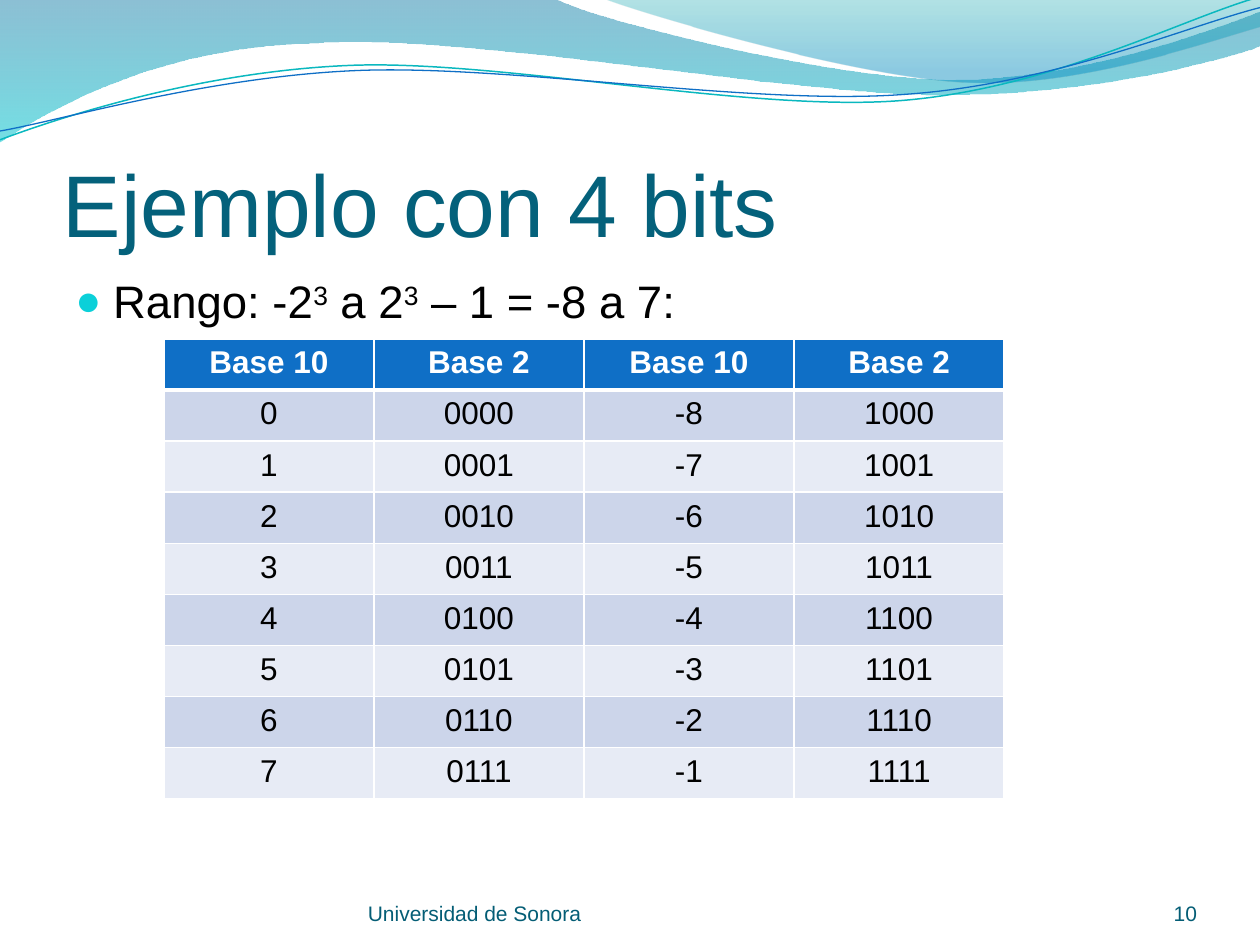
"""Builds a slide listing the 4-bit signed integers under a wave banner."""
from math import cos, radians, sin

from lxml.etree import SubElement
from pptx import Presentation
from pptx.dml.color import RGBColor
from pptx.enum.text import MSO_ANCHOR, PP_ALIGN
from pptx.oxml import parse_xml
from pptx.oxml.ns import nsdecls, qn
from pptx.util import Inches, Pt

TITLE = "Ejemplo con 4 bits"
RANGE = [("Rango: -2", False), ("3", True), (" a 2", False), ("3", True),
         (" – 1 = -8 a 7:", False)]
FOOTER, NUMBER = "Universidad de Sonora", "10"
HEADERS = ["Base 10", "Base 2"] * 2
ROWS = [[str(n), f"{n:04b}", str(n - 8), f"{n + 8:04b}"] for n in range(8)]

THEME = {
    "font": "Arial", "title": "04617B", "text": "000000", "footer": "045D75",
    "bullet": "0BD0D9", "header": "0F6FC6", "white": "FFFFFF",
    "bands": ["CCD5EA", "E7EBF5"],
    "title_pt": 50, "body_pt": 26, "table_pt": 18, "footer_pt": 12,
}

WAVES = [
    {"box": (-0.01, -0.01, 10.02, 1.14),
     "path": [(0, 0), (4.4, -0.01), (4.76, 0.17, 6.64, 0.63, 7.58, 0.63),
              (8.53, 0.63, 9.58, 0.26, 10, 0.09), (10.01, 0.36),
              (9.83, 0.44, 8.7, 0.76, 7.46, 0.75),
              (6.22, 0.75, 3.82, 0.28, 2.57, 0.34),
              (1.29, 0.36, 0.46, 0.83, -0.01, 1.13), (0, 0)],
     "stops": [(0, "0074A1", 45), (1, "00C6CF", 55)]},
    {"box": (4.79, -0.01, 5.21, 0.7),
     "path": [(4.79, -0.01), (5.09, 0.11, 6.82, 0.62, 7.69, 0.65),
              (8.56, 0.69, 9.61, 0.32, 10, 0.21), (10, 0), (4.79, -0.01)],
     "stops": [(0, "00A1A9", 30), (0.8, "008BBF", 45)]},
    {"box": (-0.02, 0.22, 10.02, 0.71), "tilt": 2.7,
     "path": [(0, 1.11), (0.48, 0.93, 1.58, 0.57, 2.77, 0.52),
              (3.95, 0.47, 5.93, 0.89, 7.13, 0.8),
              (8.33, 0.71, 9.38, 0.15, 9.98, -0.02)],
     "line": ("0AB8BF", 0.85)},
    {"box": (-0.02, 0.3, 10.03, 0.58), "tilt": 2.7,
     "path": [(0, 1.04), (0.47, 0.96, 1.64, 0.61, 2.83, 0.56),
              (4.03, 0.51, 5.97, 0.84, 7.17, 0.75),
              (8.36, 0.67, 9.41, 0.21, 10, 0.06)],
     "line": ("0F6FC6", 0.75)},
]


def rgb(value):
    return RGBColor.from_string(value)


def to_local(point, box, tilt):
    left, top, width, height = box
    dx, dy = point[0] - left - width / 2, point[1] - top - height / 2
    a = radians(tilt)
    return (Inches(width / 2 + dx * cos(a) - dy * sin(a)),
            Inches(height / 2 + dx * sin(a) + dy * cos(a)))


def add_wave(s, box, path, tilt=0, stops=None, line=None):
    segs = [[to_local(seg[i:i + 2], box, tilt) for i in range(0, len(seg), 2)] for seg in path]
    builder = s.shapes.build_freeform(*segs[0][0])
    builder.add_line_segments([seg[-1] for seg in segs[1:]], close=bool(stops))
    sp = builder.convert_to_shape()
    sp.left, sp.top, sp.width, sp.height = map(Inches, box)
    sp.rotation = -tilt % 360
    outline = next(sp.element.iter(qn("a:path")))
    outline.set("w", str(sp.width))
    outline.set("h", str(sp.height))
    for node, seg in zip(list(outline), segs):
        if len(seg) == 3:
            node.addprevious(parse_xml(f'<a:cubicBezTo {nsdecls("a")}/>'))
            curve = node.getprevious()
            outline.remove(node)
            node = curve
        for pt in list(node):
            node.remove(pt)
        for x, y in seg:
            SubElement(node, qn("a:pt"), x=str(x), y=str(y))
    sp.shadow.inherit = False
    if line:
        sp.fill.background()
        sp.line.color.rgb, sp.line.width = rgb(line[0]), Pt(line[1])
        return
    sp.line.fill.background()
    sp.fill.gradient()
    sp.fill.gradient_angle = 270
    for stop, (pos, color, _) in zip(sp.fill.gradient_stops, stops):
        stop.position, stop.color.rgb = pos, rgb(color)
    for clr, (_, _, opacity) in zip(sp.element.spPr.iter(qn("a:srgbClr")), stops):
        SubElement(clr, qn("a:alpha")).set("val", str(opacity * 1000))


def write(tf, text, size, color, bold=False, align=PP_ALIGN.LEFT):
    p = tf.paragraphs[0]
    p.alignment = align
    for part, raised in [(text, False)] if isinstance(text, str) else text:
        r = p.add_run()
        r.text = part
        r.font.name, r.font.size = THEME["font"], Pt(size)
        r.font.bold, r.font.color.rgb = bold, rgb(color)
        if raised:
            r.font._element.set("baseline", "30000")
    return p


def add_box(s, box, insets=(0, 0, 0, 0), anchor=MSO_ANCHOR.BOTTOM):
    tf = s.shapes.add_textbox(*map(Inches, box)).text_frame
    tf.word_wrap, tf.vertical_anchor = True, anchor
    tf.margin_left, tf.margin_top, tf.margin_right, tf.margin_bottom = map(Inches, insets)
    return tf


def add_bullet(p):
    p.space_before = Pt(3)
    pPr = p._p.get_or_add_pPr()
    pPr.set("marL", str(Inches(0.3)))
    pPr.set("indent", str(-Inches(0.3)))
    SubElement(SubElement(pPr, qn("a:buClr")), qn("a:srgbClr")).set("val", THEME["bullet"])
    SubElement(pPr, qn("a:buSzPct")).set("val", "95000")
    SubElement(pPr, qn("a:buFont")).set("typeface", THEME["font"])
    SubElement(pPr, qn("a:buChar")).set("char", "●")


def set_borders(cell, **widths):
    tcPr = cell._tc.get_or_add_tcPr()
    for i, side in enumerate("LRTB"):
        tcPr.insert(i, parse_xml(
            f'<a:ln{side} {nsdecls("a")} w="{Pt(widths.get(side, 1))}"><a:solidFill>'
            f'<a:srgbClr val="{THEME["white"]}"/></a:solidFill></a:ln{side}>'))


def add_grid(s, left, top, width, height):
    rows = [HEADERS] + ROWS
    table = s.shapes.add_table(len(rows), len(HEADERS), Inches(left), Inches(top),
                               Inches(width), Inches(height)).table
    for i, values in enumerate(rows):
        head = i == 0
        for j, value in enumerate(values):
            cell = table.cell(i, j)
            cell.fill.solid()
            cell.fill.fore_color.rgb = rgb(THEME["header"] if head else THEME["bands"][(i - 1) % 2])
            set_borders(cell, T=3 if i == 1 else 1, B=3 if head else 1)
            write(cell.text_frame, value, THEME["table_pt"],
                  THEME["white"] if head else THEME["text"], bold=head, align=PP_ALIGN.CENTER)


def main():
    prs = Presentation()
    prs.slide_width, prs.slide_height = Inches(10), Inches(7.5)
    s = prs.slides.add_slide(prs.slide_layouts[6])
    for wave in WAVES:
        add_wave(s, **wave)
    write(add_box(s, (0.5, 0.77, 9, 1.25), (0, 0.05, 0, 0)), TITLE,
          THEME["title_pt"], THEME["title"])
    body = add_box(s, (0.5, 2.12, 9, 4.8), (0.1, 0.05, 0.1, 0.05), MSO_ANCHOR.TOP)
    add_bullet(write(body, RANGE, THEME["body_pt"], THEME["text"]))
    write(add_box(s, (2.92, 6.95, 3.67, 0.4)), FOOTER, THEME["footer_pt"], THEME["footer"])
    write(add_box(s, (8.67, 6.95, 0.83, 0.4)), NUMBER, THEME["footer_pt"], THEME["footer"],
          align=PP_ALIGN.RIGHT)
    add_grid(s, 1.3, 2.69, 6.67, 3.65)
    prs.save("out.pptx")


if __name__ == "__main__":
    main()
